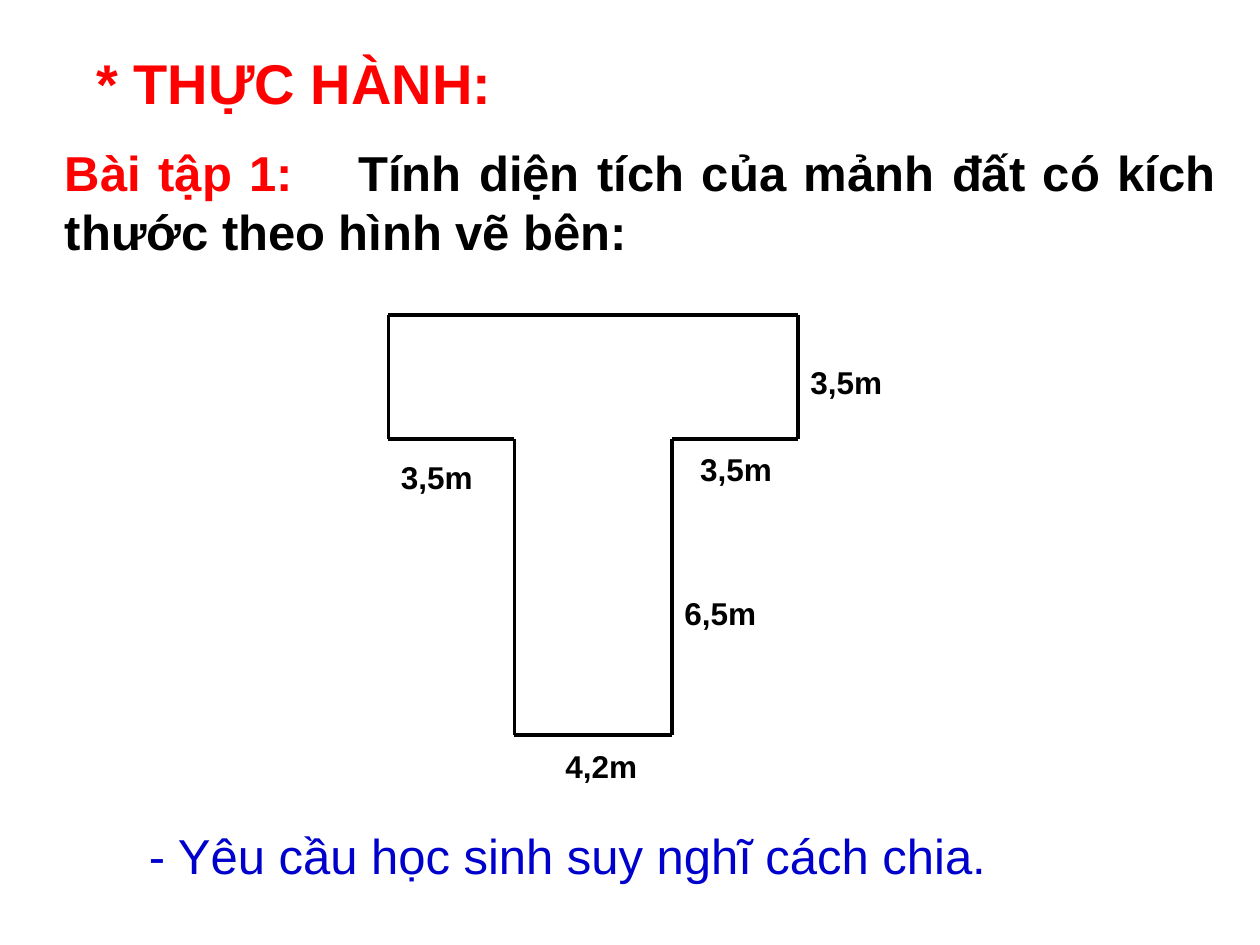
from lxml import etree
from pptx import Presentation
from pptx.dml.color import RGBColor
from pptx.enum.shapes import MSO_CONNECTOR
from pptx.enum.text import MSO_AUTO_SIZE, PP_ALIGN
from pptx.oxml.ns import qn
from pptx.util import Pt

LINE = MSO_CONNECTOR.STRAIGHT
FIT = MSO_AUTO_SIZE.SHAPE_TO_FIT_TEXT
LEFT, JUST = PP_ALIGN.LEFT, PP_ALIGN.JUSTIFY

RED = RGBColor(0xFF, 0x00, 0x00)
BLACK = RGBColor(0x00, 0x00, 0x00)
BLUE = RGBColor(0x00, 0x00, 0xCC)
FONT = "Arial"

# Corners of the T-shaped plot, clockwise from the top left
PLOT = [(222, 180), (456, 180), (456, 251), (384, 251),
        (384, 420), (294, 420), (294, 251), (222, 251)]

# Side lengths: text, left, top, width
SIDES = [
    ("3,5m", 393, 253.5, 66),
    ("3,5m", 456, 204, 60),
    ("3,5m", 222, 258, 84),
    ("6,5m", 384, 336, 84),
    ("4,2m", 316, 423.5, 84),
]


def add_text(slide, box, runs, size, bold=True, align=LEFT):
    """Add a one-paragraph text box; runs are (text, colour) pairs."""
    frame = slide.shapes.add_textbox(*map(Pt, box)).text_frame
    frame.word_wrap = True
    frame.auto_size = FIT
    para = frame.paragraphs[0]
    para.alignment = align
    for text, color in runs:
        run = para.add_run()
        run.text = text
        font = run.font
        font.name, font.size, font.bold = FONT, Pt(size), bold
        font.color.rgb = color
    return para


def add_tab(para, pos):
    """Set one left tab stop for a paragraph."""
    props = para._p.get_or_add_pPr()
    tabs = etree.SubElement(props, qn("a:tabLst"))
    etree.SubElement(tabs, qn("a:tab"), pos=str(Pt(pos)), algn="l")


def add_line(slide, start, end):
    line = slide.shapes.add_connector(LINE, *map(Pt, start + end))
    line.line.color.rgb = BLACK
    line.line.width = Pt(2.25)
    etree.SubElement(line._element.spPr, qn("a:effectLst"))


def main():
    deck = Presentation()
    deck.slide_width, deck.slide_height = Pt(720), Pt(540)
    slide = deck.slides.add_slide(deck.slide_layouts[6])

    # Heading and task
    add_text(slide, (48, 24, 354, 46), [("* THỰC HÀNH:", RED)], 32)
    task = add_text(
        slide, (30, 78, 672, 75),
        [("Bài tập 1:\t", RED),
         ("Tính diện tích của mảnh đất có kích thước theo hình vẽ bên:",
          BLACK)],
        28, align=JUST)
    add_tab(task, 163)

    # Plot outline
    for start, end in zip(PLOT, PLOT[1:] + PLOT[:1]):
        add_line(slide, start, end)

    # Side lengths
    for text, left, top, width in SIDES:
        add_text(slide, (left, top, width, 29), [(text, BLACK)], 18)

    # Hint for the pupils
    add_text(slide, (78, 468, 588, 41),
             [("- Yêu cầu học sinh suy nghĩ cách chia.", BLUE)],
             28, bold=False, align=JUST)

    deck.save("out.pptx")


if __name__ == "__main__":
    main()
